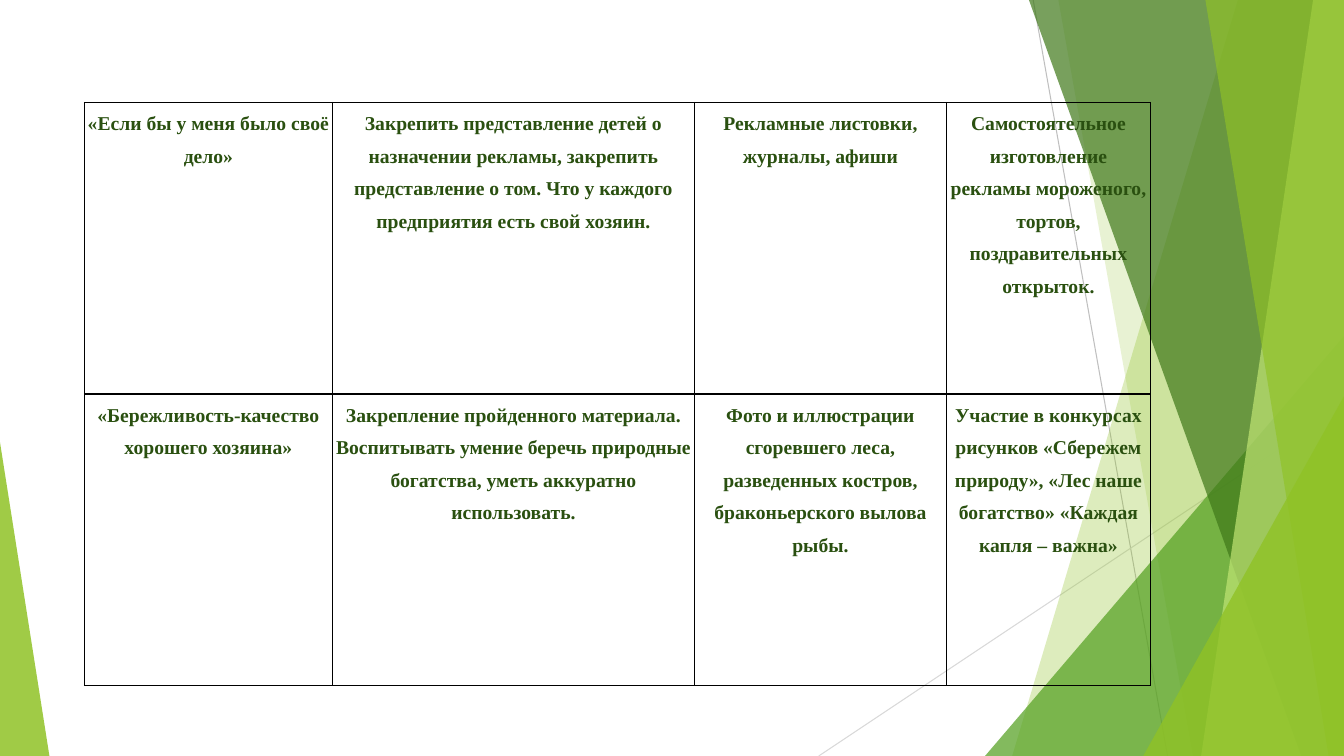
from pptx import Presentation
from pptx.dml.color import RGBColor
from pptx.enum.shapes import MSO_CONNECTOR, MSO_SHAPE
from pptx.enum.text import PP_ALIGN
from pptx.oxml.ns import qn
from pptx.util import Pt
from lxml.etree import SubElement

WIDTH, HEIGHT = 960, 540
LIME = RGBColor(0x90, 0xC2, 0x26)
PALE_LIME = RGBColor(0xC0, 0xE4, 0x74)
GREEN = RGBColor(0x54, 0xA0, 0x21)
DARK_GREEN = RGBColor(0x3F, 0x78, 0x19)
TEXT_GREEN = RGBColor(0x2A, 0x50, 0x10)
GRAY = RGBColor(0xBF, 0xBF, 0xBF)
LIGHT_GRAY = RGBColor(0xD9, 0xD9, 0xD9)
BLACK = RGBColor(0, 0, 0)

COLUMNS = [177.2, 258.7, 179.8, 146]
ROW_HEIGHT = 208.3
ROWS = [
    ["«Если бы у меня было своё дело»",
     "Закрепить представление детей о назначении рекламы, закрепить "
     "представление о том. Что у каждого предприятия есть свой хозяин.",
     "Рекламные листовки, журналы, афиши",
     "Самостоятельное изготовление рекламы мороженого, тортов, "
     "поздравительных открыток."],
    ["«Бережливость-качество хорошего хозяина»",
     "Закрепление пройденного материала. Воспитывать умение беречь "
     "природные богатства, уметь аккуратно использовать.",
     "Фото и иллюстрации сгоревшего леса, разведенных костров, "
     "браконьерского вылова рыбы.",
     "Участие в конкурсах рисунков «Сбережем природу», «Лес наше "
     "богатство» «Каждая капля – важна»"],
]


def add_line(slide, x1, y1, x2, y2, color):
    ln = slide.shapes.add_connector(
        MSO_CONNECTOR.STRAIGHT, Pt(x1), Pt(y1), Pt(x2), Pt(y2))
    ln.line.color.rgb = color
    ln.line.width = Pt(0.75)
    SubElement(ln._element.spPr, qn("a:effectLst"))


def paint(sp, color, opacity):
    sp.shadow.inherit = False
    sp.line.fill.background()
    sp.fill.solid()
    sp.fill.fore_color.rgb = color
    clr = sp._element.spPr.find(qn("a:solidFill"))[0]
    SubElement(clr, qn("a:alpha"), val=str(opacity * 1000))


def add_band(slide, top_x, bottom_x, color, opacity):
    """Full-height band from a slanted left edge to the right slide edge."""
    builder = slide.shapes.build_freeform(Pt(top_x), 0)
    builder.add_line_segments([
        (Pt(WIDTH), 0), (Pt(WIDTH), Pt(HEIGHT)), (Pt(bottom_x), Pt(HEIGHT))])
    paint(builder.convert_to_shape(), color, opacity)


def add_corner(slide, x, width, height, apex, color, opacity):
    """Right triangle standing on the bottom slide edge."""
    sp = slide.shapes.add_shape(
        MSO_SHAPE.ISOSCELES_TRIANGLE,
        Pt(x), Pt(HEIGHT - height), Pt(width), Pt(height))
    sp.adjustments[0] = apex
    paint(sp, color, opacity)


def add_borders(cell):
    tc_pr = cell._tc.get_or_add_tcPr()
    for side in ("lnL", "lnR", "lnT", "lnB"):
        ln = SubElement(tc_pr, qn("a:" + side), w=str(Pt(1)))
        fill = SubElement(ln, qn("a:solidFill"))
        SubElement(fill, qn("a:srgbClr"), val=str(BLACK))


def fill_cell(cell, text):
    add_borders(cell)
    cell.fill.background()
    cell.margin_left = cell.margin_right = Pt(1.5)
    cell.margin_top = cell.margin_bottom = 0
    p = cell.text_frame.paragraphs[0]
    p.text = text
    p.alignment = PP_ALIGN.CENTER
    p.line_spacing = 1.5
    p.font.name = "Times New Roman"
    p.font.size = Pt(14)
    p.font.bold = True
    p.font.color.rgb = TEXT_GREEN


def add_lesson_table(slide, x, y):
    table = slide.shapes.add_table(
        len(ROWS), len(COLUMNS), Pt(x), Pt(y),
        Pt(sum(COLUMNS)), Pt(ROW_HEIGHT * len(ROWS))).table
    table.first_row = table.horz_banding = False
    for col, width in zip(table.columns, COLUMNS):
        col.width = Pt(width)
    for r, texts in enumerate(ROWS):
        table.rows[r].height = Pt(ROW_HEIGHT)
        for c, text in enumerate(texts):
            fill_cell(table.cell(r, c), text)


def main():
    prs = Presentation()
    prs.slide_width, prs.slide_height = Pt(WIDTH), Pt(HEIGHT)
    slide = prs.slides.add_slide(prs.slide_layouts[6])

    # Thin background lines
    add_line(slide, 738, 0, 834, HEIGHT, GRAY)
    add_line(slide, WIDTH, 290, 584.8, HEIGHT, LIGHT_GRAY)

    # Translucent green facets
    add_band(slide, 884.2, 723, LIME, 30)
    add_band(slide, 756, 852, LIME, 20)
    add_corner(slide, 703.6, 256.4, 300, 1, GREEN, 72)
    add_band(slide, 735, 929.5, DARK_GREEN, 70)
    add_band(slide, 938, 858, PALE_LIME, 70)
    add_band(slide, 861, 949, LIME, 65)
    add_corner(slide, 816.6, 143.4, 257, 1, LIME, 80)
    add_corner(slide, 0, 35.3, 224, 0, LIME, 85)

    # Lesson plan
    add_lesson_table(slide, 60.3, 73.1)

    prs.save("out.pptx")


if __name__ == "__main__":
    main()
